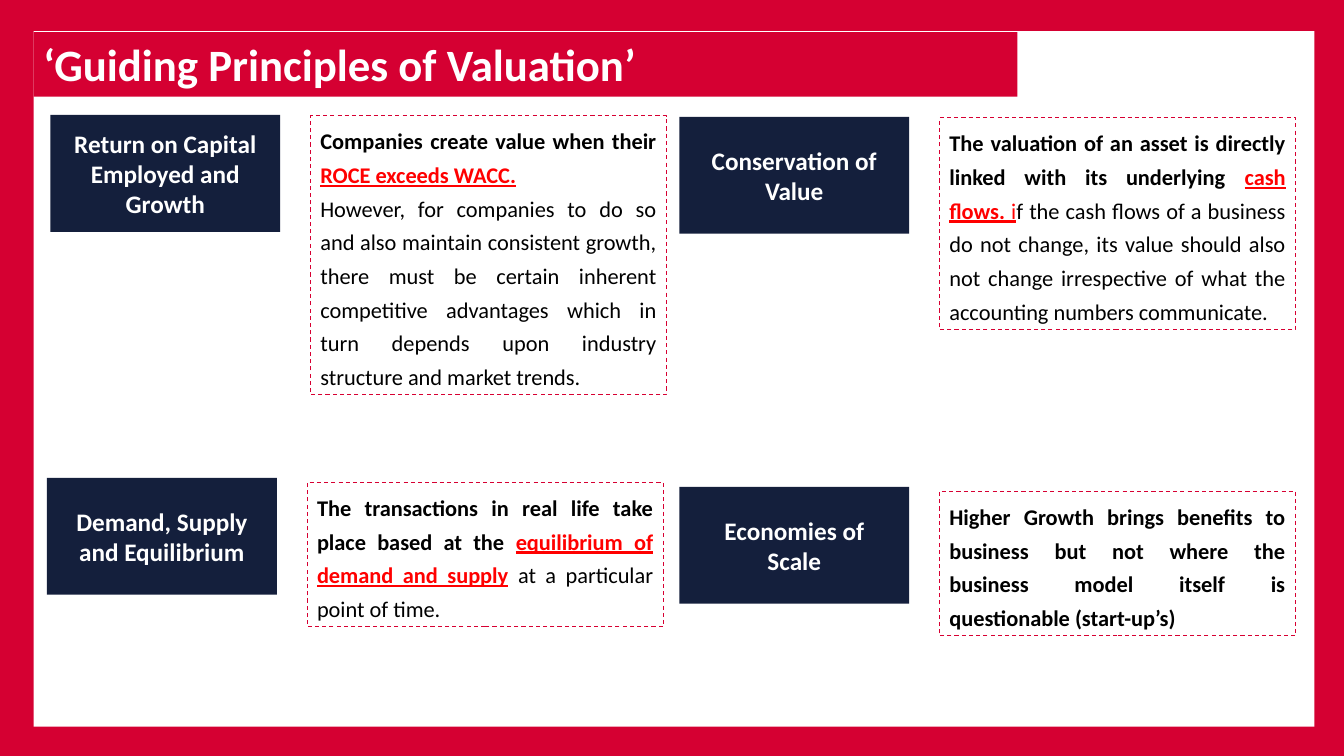
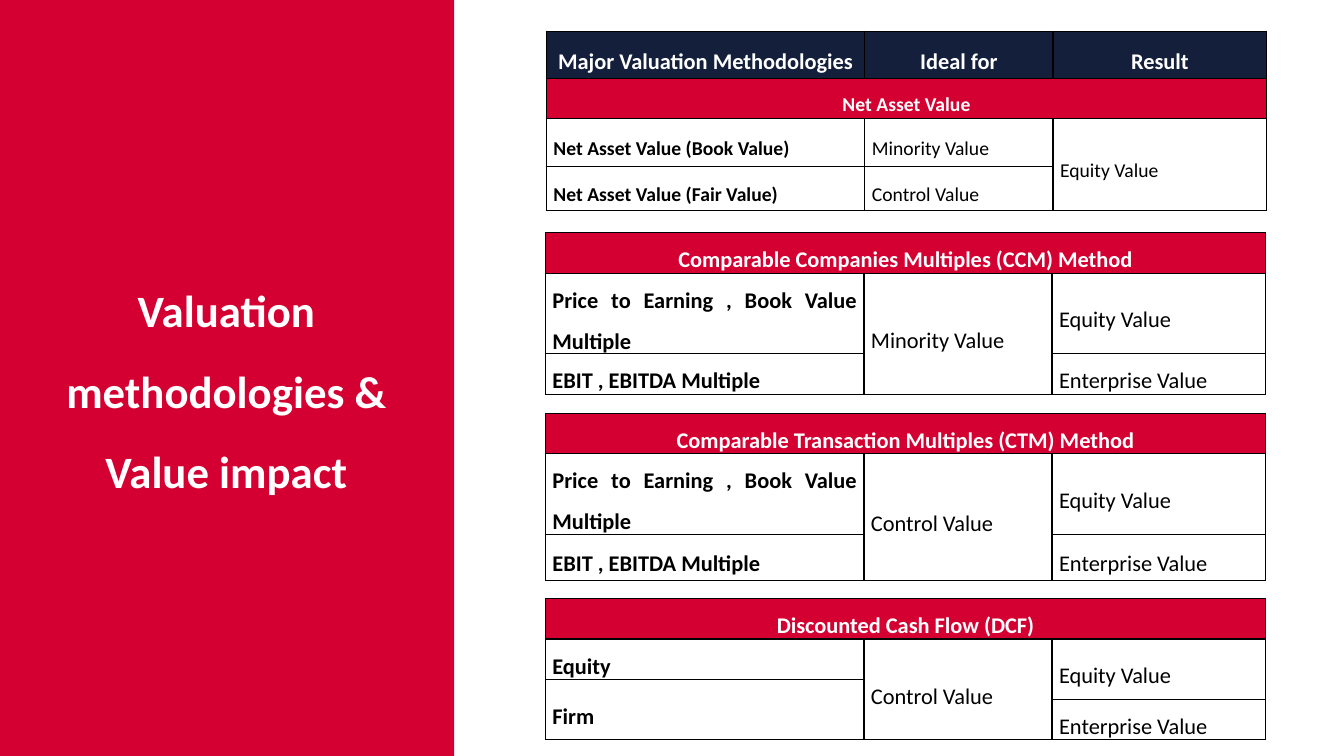
from dataclasses import dataclass

from lxml import etree
from pptx import Presentation
from pptx.dml.color import RGBColor
from pptx.enum.dml import MSO_LINE
from pptx.enum.shapes import MSO_SHAPE
from pptx.enum.text import MSO_ANCHOR, MSO_AUTO_SIZE, PP_ALIGN
from pptx.oxml.ns import qn
from pptx.util import Inches, Pt

RECTANGLE = MSO_SHAPE.RECTANGLE
DASH = MSO_LINE.DASH
TOP, MIDDLE = MSO_ANCHOR.TOP, MSO_ANCHOR.MIDDLE
LEFT, CENTER, JUSTIFY = PP_ALIGN.LEFT, PP_ALIGN.CENTER, PP_ALIGN.JUSTIFY
GROW = MSO_AUTO_SIZE.SHAPE_TO_FIT_TEXT

# Slide grid: one row is a tenth of an inch
COLUMNS, ROWS = 100, 75

# Table cells that continue a neighbour
BESIDE, ABOVE = "<", "^"


@dataclass(frozen=True)
class Theme:
    font: str = "Calibri"
    red: str = "D50032"
    navy: str = "141F3C"
    white: str = "FFFFFF"
    black: str = "000000"
    mark: str = "FF0000"
    dash: str = "D70032"
    title_size: int = 32
    label_size: int = 18
    body_size: int = 16
    small_size: int = 14
    note_leading: int = 24
    wide_leading: float = 1.5


@dataclass(frozen=True)
class Look:
    size: int
    color: str
    bold: bool = False
    underline: bool = False


THEME = Theme()
TITLE = Look(THEME.title_size, THEME.white, bold=True)
LABEL = Look(THEME.label_size, THEME.white, bold=True)
STRONG = Look(THEME.body_size, THEME.black, bold=True)
PLAIN = Look(THEME.body_size, THEME.black)
MARK = Look(THEME.body_size, THEME.mark, bold=True, underline=True)
LIGHT_MARK = Look(THEME.body_size, THEME.mark, underline=True)


class Deck:
    """Holds the theme and the slide being built."""

    def __init__(self, theme):
        self.theme = theme
        self.presentation = Presentation()
        self.presentation.slide_width = Inches(13.33)
        self.presentation.slide_height = Inches(7.5)
        self.slide = None

    def add_slide(self):
        blank = self.presentation.slide_layouts[6]
        self.slide = self.presentation.slides.add_slide(blank)

    def across(self, columns):
        return round(self.presentation.slide_width * columns / COLUMNS)

    def down(self, rows):
        return round(self.presentation.slide_height * rows / ROWS)

    def place(self, left, top, width, height):
        return (self.across(left), self.down(top),
                self.across(width), self.down(height))

    def set_text(self, frame, paragraphs, align, leading=None):
        """Fill a text frame; each paragraph is a list of (text, look)."""
        frame.word_wrap = True
        for index, runs in enumerate(paragraphs):
            paragraph = frame.add_paragraph() if index else frame.paragraphs[0]
            paragraph.alignment = align
            paragraph.line_spacing = leading
            for text, look in runs:
                run = paragraph.add_run()
                run.text = text
                run.font.name = self.theme.font
                run.font.size = Pt(look.size)
                run.font.bold = look.bold
                run.font.underline = look.underline
                run.font.color.rgb = RGBColor.from_string(look.color)

    def box(self, left, top, width, height, fill=None):
        shape = self.slide.shapes.add_shape(
            RECTANGLE, *self.place(left, top, width, height))
        shape.shadow.inherit = False
        shape.line.fill.background()
        if fill:
            shape.fill.solid()
            shape.fill.fore_color.rgb = RGBColor.from_string(fill)
        else:
            shape.fill.background()
        return shape

    def title(self, text):
        frame = self.box(2.5, 3.2, 73.2, 6.4, self.theme.red).text_frame
        frame.vertical_anchor = TOP
        frame.auto_size = GROW
        self.set_text(frame, [[(text, TITLE)]], LEFT)

    def label(self, left, top, text, inset):
        frame = self.box(left, top, 17.1, 11.6, self.theme.navy).text_frame
        frame.vertical_anchor = MIDDLE
        frame.margin_left = frame.margin_right = self.across(inset)
        self.set_text(frame, [[(text, LABEL)]], CENTER)

    def note(self, left, top, line_count, paragraphs):
        leading = Pt(self.theme.note_leading)
        height = line_count * leading / self.down(1) + 1
        shape = self.box(left, top, 26.5, height)
        shape.line.color.rgb = RGBColor.from_string(self.theme.dash)
        shape.line.width = Pt(0.75)
        shape.line.dash_style = DASH
        shape.text_frame.vertical_anchor = TOP
        shape.text_frame.auto_size = GROW
        self.set_text(shape.text_frame, paragraphs, JUSTIFY, leading)

    def heading(self, left, top, width, height, text):
        textbox = self.slide.shapes.add_textbox(
            *self.place(left, top, width, height))
        textbox.text_frame.auto_size = GROW
        self.set_text(textbox.text_frame, [[(text, TITLE)]], CENTER,
                      self.theme.wide_leading)

    def cell(self, cell, text, look, align, fill):
        cell.vertical_anchor = MIDDLE
        cell.margin_left = cell.margin_right = Inches(0.07)
        cell.margin_top = cell.margin_bottom = 0
        if text not in (BESIDE, ABOVE):
            self.set_text(cell.text_frame, [[(text, look)]], align,
                          self.theme.wide_leading)
        # Borders come before the fill in the cell properties
        properties = cell._tc.get_or_add_tcPr()
        for side in ("lnL", "lnR", "lnT", "lnB"):
            border = etree.SubElement(properties, qn("a:" + side),
                                      w=str(Pt(1)))
            solid = etree.SubElement(border, qn("a:solidFill"))
            etree.SubElement(solid, qn("a:srgbClr"), val=self.theme.black)
        if fill:
            cell.fill.solid()
            cell.fill.fore_color.rgb = RGBColor.from_string(fill)
        else:
            cell.fill.background()

    def table(self, left, top, widths, heights, rows, size, has_header=False):
        table = self.slide.shapes.add_table(
            len(rows), len(widths),
            *self.place(left, top, sum(widths), sum(heights))).table
        table.first_row = table.horz_banding = False
        for column, width in zip(table.columns, widths):
            column.width = self.across(width)
        for row, height in zip(table.rows, heights):
            row.height = self.down(height)

        for r, texts in enumerate(rows):
            is_header = has_header and r == 0
            is_band = BESIDE in texts
            for c, text in enumerate(texts):
                if is_header:
                    style = (Look(self.theme.body_size, self.theme.white, True),
                             CENTER, self.theme.navy)
                elif is_band:
                    style = (Look(size, self.theme.white, True),
                             CENTER, self.theme.red)
                else:
                    style = (Look(size, self.theme.black, c == 0),
                             JUSTIFY, None)
                self.cell(table.cell(r, c), text, *style)

        # Merge each cell with the markers that follow it
        for r, texts in enumerate(rows):
            for c, text in enumerate(texts):
                if text in (BESIDE, ABOVE):
                    continue
                last_row, last_column = r, c
                while (last_column + 1 < len(texts)
                       and texts[last_column + 1] == BESIDE):
                    last_column += 1
                while (last_row + 1 < len(rows)
                       and rows[last_row + 1][c] == ABOVE):
                    last_row += 1
                if (last_row, last_column) != (r, c):
                    table.cell(r, c).merge(table.cell(last_row, last_column))


# Left, top, label, label inset, note drop, note line count, note paragraphs
PRINCIPLES = [
    (3.75, 11.4, "Return on Capital Employed and Growth", 0.75, 0.1, 8, [
        [("Companies create value when their ", STRONG),
         ("ROCE exceeds WACC.", MARK)],
        [("However, for companies to do so and also maintain consistent "
          "growth, there must be certain inherent competitive advantages "
          "which in turn depends upon industry structure and market trends.",
          PLAIN)]]),
    (50.55, 11.6, "Conservation of Value", 2.1, 0.1, 6, [
        [("The valuation of an asset is directly linked with its "
          "underlying ", STRONG),
         ("cash flows.", MARK),
         (" i", LIGHT_MARK),
         ("f the cash flows of a business do not change, its value should "
          "also not change irrespective of what the accounting numbers "
          "communicate. ", PLAIN)]]),
    (3.5, 47.4, "Demand, Supply and Equilibrium", 0.75, 0.45, 4, [
        [("The transactions in real life take place based at the ", STRONG),
         ("equilibrium of demand and supply", MARK),
         (" at a particular point of time.", PLAIN)]]),
    (50.55, 48.3, "Economies of Scale", 2.1, 0.45, 4, [
        [("Higher Growth brings benefits to business but not where the "
          "business model itself is questionable (start-up’s)", STRONG)]]),
]

METHOD_WIDTHS = [23.7, 14, 15.9]


def multiples(name, value):
    return [[name, BESIDE, BESIDE],
            ["Price to Earning , Book Value Multiple", value, "Equity Value"],
            ["EBIT , EBITDA Multiple", ABOVE, "Enterprise Value"]]


# Top and row heights of each method, with its cells
METHODS = [
    (23.1, [4, 8, 4], multiples(
        "Comparable Companies Multiples (CCM) Method", "Minority Value")),
    (41, [4, 8, 4.6], multiples(
        "Comparable Transaction Multiples (CTM) Method", "Control Value")),
    (59.4, [4, 4, 2, 4], [
        ["Discounted Cash Flow (DCF)", BESIDE, BESIDE],
        ["Equity", "Control Value", "Equity Value"],
        ["Firm", ABOVE, ABOVE],
        [ABOVE, ABOVE, "Enterprise Value"]]),
]

ASSET_VALUE = [
    ["Major Valuation Methodologies", "Ideal for", "Result"],
    ["Net Asset Value", BESIDE, BESIDE],
    ["Net Asset Value (Book Value)", "Minority Value", "Equity Value"],
    ["Net Asset Value (Fair Value)", "Control Value", ABOVE],
]


def build_principles(deck):
    deck.add_slide()
    deck.box(0, 0, COLUMNS, ROWS, deck.theme.red)
    deck.box(2.5, 3.1, 95.3, 69, deck.theme.white)
    for left, top, label, inset, drop, line_count, paragraphs in PRINCIPLES:
        deck.label(left, top, label, inset)
        deck.note(left + 19.35, top + drop, line_count, paragraphs)
    deck.title("‘Guiding Principles of Valuation’")


def build_methodologies(deck):
    deck.add_slide()
    deck.box(0, 0, 33.8, ROWS, deck.theme.red)
    deck.heading(1.95, 24.9, 29.8, 25.2,
                 "Valuation methodologies & Value impact")
    deck.table(40.65, 3.1, METHOD_WIDTHS, [4.7, 4, 4.7, 4.4], ASSET_VALUE,
               deck.theme.small_size, has_header=True)
    for top, heights, rows in METHODS:
        deck.table(40.58, top, METHOD_WIDTHS, heights, rows,
                   deck.theme.body_size)


def main():
    deck = Deck(THEME)
    build_principles(deck)
    build_methodologies(deck)
    deck.presentation.save("out.pptx")


if __name__ == "__main__":
    main()
